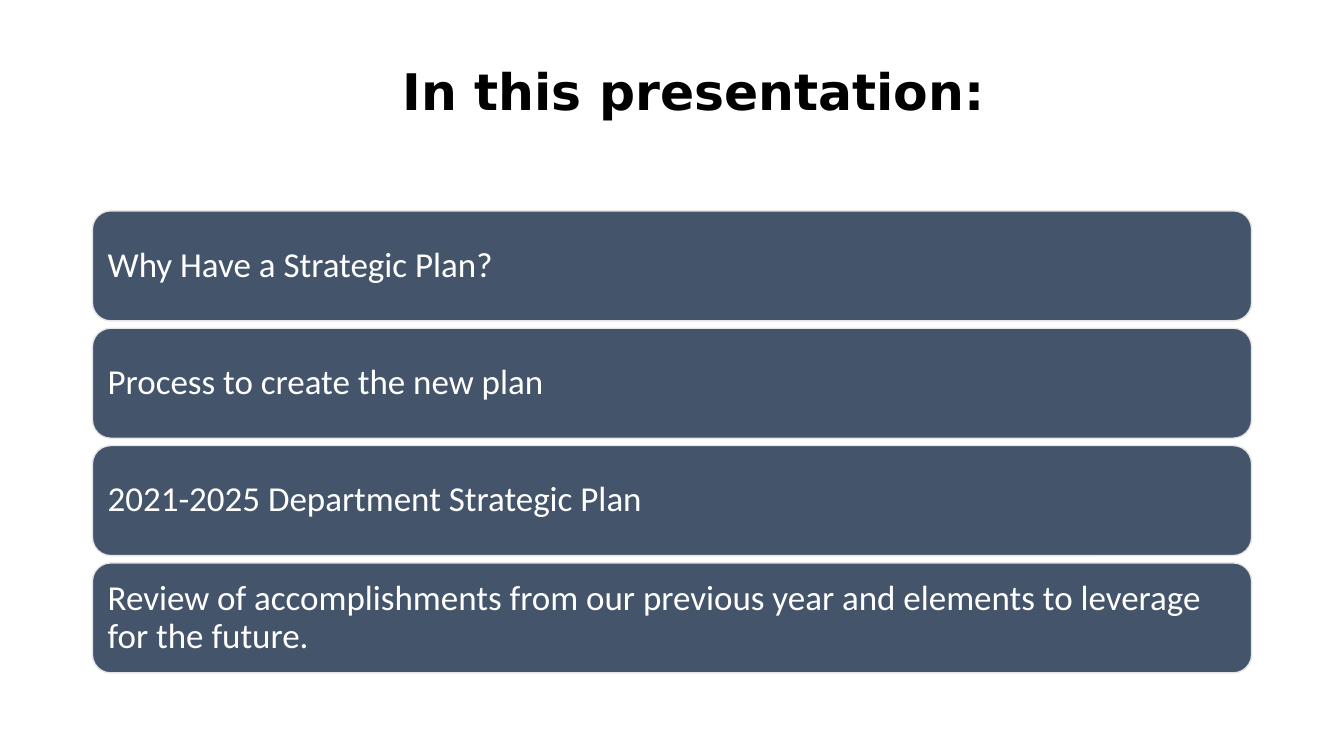
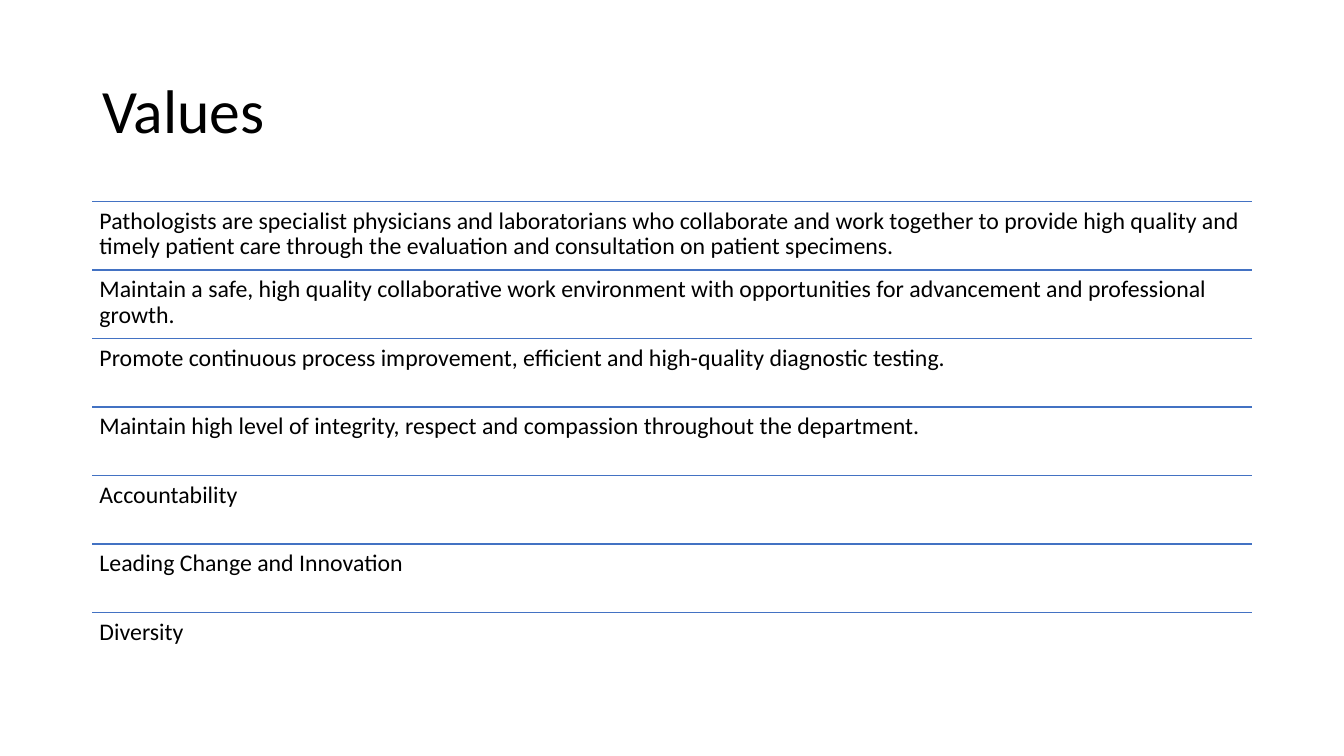
import pptx
import pptx.util
import pptx.dml.color
import pptx.enum.shapes
import pptx.enum.text
import pptx.oxml.ns
import lxml.etree

ALIGN = pptx.enum.text.PP_ALIGN
ANCHOR = pptx.enum.text.MSO_ANCHOR


class Theme:
    """Colours, type sizes and text formats shared by the slides."""
    colors = {"background": "FFFFFF", "ink": "000000", "card": "44546A",
              "card_edge": "E7E6E6", "card_text": "FFFFFF", "rule": "4372C3"}
    line_width = 1
    line_spacing = 0.9
    # Insets are left, top, right, bottom in inches
    text = {
        "banner": {"font": {"name": "DejaVu Sans", "size": 36, "bold": True},
                   "color": "ink", "align": ALIGN.CENTER,
                   "anchor": ANCHOR.MIDDLE, "insets": (0.53, 0.05, 0.1, 0.05)},
        "title": {"font": {"name": "Calibri", "size": 44, "bold": False},
                  "color": "ink", "align": ALIGN.LEFT,
                  "anchor": ANCHOR.MIDDLE, "insets": (0.1, 0.05, 0.1, 0.05)},
        "card": {"font": {"name": "Calibri", "size": 25, "bold": False},
                 "color": "card_text", "align": ALIGN.LEFT,
                 "anchor": ANCHOR.MIDDLE, "insets": (0.1, 0.1, 0.1, 0.1)},
        "entry": {"font": {"name": "Calibri", "size": 17, "bold": False},
                  "color": "ink", "align": ALIGN.LEFT,
                  "anchor": ANCHOR.TOP, "insets": (0.07, 0.07, 0.07, 0.07)},
    }

    @classmethod
    def color(cls, name):
        return pptx.dml.color.RGBColor.from_string(cls.colors[name])


class Deck:
    """Draws on the current slide; lengths are columns and rows of a grid."""
    columns, rows = 160, 90
    left, width = 11, 138

    def __init__(self):
        self.presentation = pptx.Presentation()
        self.presentation.slide_width = pptx.util.Inches(13.33)
        self.presentation.slide_height = pptx.util.Inches(7.5)
        self.slide = None

    def add_slide(self):
        self.slide = self.presentation.slides.add_slide(
            self.presentation.slide_layouts[6])
        fill = self.slide.background.fill
        fill.solid()
        fill.fore_color.rgb = Theme.color("background")

    def x(self, columns):
        return round(self.presentation.slide_width * columns / self.columns)

    def y(self, rows):
        return round(self.presentation.slide_height * rows / self.rows)

    def band(self, top, height):
        """Box of the content width."""
        return self.x(self.left), self.y(top), self.x(self.width), self.y(height)

    def fill_text(self, shape, text, style):
        style = Theme.text[style]
        frame = shape.text_frame
        sides = ("margin_left", "margin_top", "margin_right", "margin_bottom")
        frame_format = dict(zip(sides, map(pptx.util.Inches, style["insets"])))
        frame_format.update(word_wrap=True, vertical_anchor=style["anchor"])
        for name, value in frame_format.items():
            setattr(frame, name, value)
        paragraph = frame.paragraphs[0]
        paragraph.alignment = style["align"]
        paragraph.line_spacing = Theme.line_spacing
        run = paragraph.add_run()
        run.text = text
        font_format = {**style["font"],
                       "size": pptx.util.Pt(style["font"]["size"])}
        for name, value in font_format.items():
            setattr(run.font, name, value)
        run.font.color.rgb = Theme.color(style["color"])

    def outline(self, line, color):
        line.color.rgb = Theme.color(color)
        line.width = pptx.util.Pt(Theme.line_width)

    def text(self, text, top, height, style):
        box = self.slide.shapes.add_textbox(*self.band(top, height))
        self.fill_text(box, text, style)

    def card(self, text, top, height):
        card = self.slide.shapes.add_shape(
            pptx.enum.shapes.MSO_SHAPE.ROUNDED_RECTANGLE,
            *self.band(top, height))
        card.shadow.inherit = False
        card.fill.solid()
        card.fill.fore_color.rgb = Theme.color("card")
        self.outline(card.line, "card_edge")
        self.fill_text(card, text, "card")

    def rule(self, top):
        rule = self.slide.shapes.add_connector(
            pptx.enum.shapes.MSO_CONNECTOR.STRAIGHT,
            self.x(self.left), self.y(top),
            self.x(self.left + self.width), self.y(top))
        self.outline(rule.line, "rule")
        lxml.etree.SubElement(rule.element.spPr,
                              pptx.oxml.ns.qn("a:effectLst"))


def build_agenda(deck):
    topics = [
        "Why Have a Strategic Plan?",
        "Process to create the new plan",
        "2021-2025 Department Strategic Plan",
        "Review of accomplishments from our previous year and elements "
        "to leverage for the future.",
    ]
    top, height, pitch = 25.1, 13.1, 13.97
    deck.add_slide()
    deck.text("In this presentation:", 7.3, 7.8, "banner")
    # Stacked cards
    for index, topic in enumerate(topics):
        deck.card(topic, top + index * pitch, height)


def build_values(deck):
    values = [
        "Pathologists are specialist physicians and laboratorians who "
        "collaborate and work together to provide high quality and timely "
        "patient care through the evaluation and consultation on patient "
        "specimens.",
        "Maintain a safe, high quality collaborative work environment with "
        "opportunities for advancement and professional growth.",
        "Promote continuous process improvement, efficient and high-quality "
        "diagnostic testing.",
        "Maintain high level of integrity, respect and compassion throughout "
        "the department.",
        "Accountability",
        "Leading Change and Innovation",
        "Diversity",
    ]
    top, pitch = 24, 8.15
    deck.add_slide()
    deck.text("Values", 4.8, 17.4, "title")
    # Ruled list
    for index, value in enumerate(values):
        deck.rule(top + index * pitch)
        deck.text(value, top + index * pitch, pitch, "entry")


def main():
    deck = Deck()
    build_agenda(deck)
    build_values(deck)
    deck.presentation.save("out.pptx")


if __name__ == "__main__":
    main()
